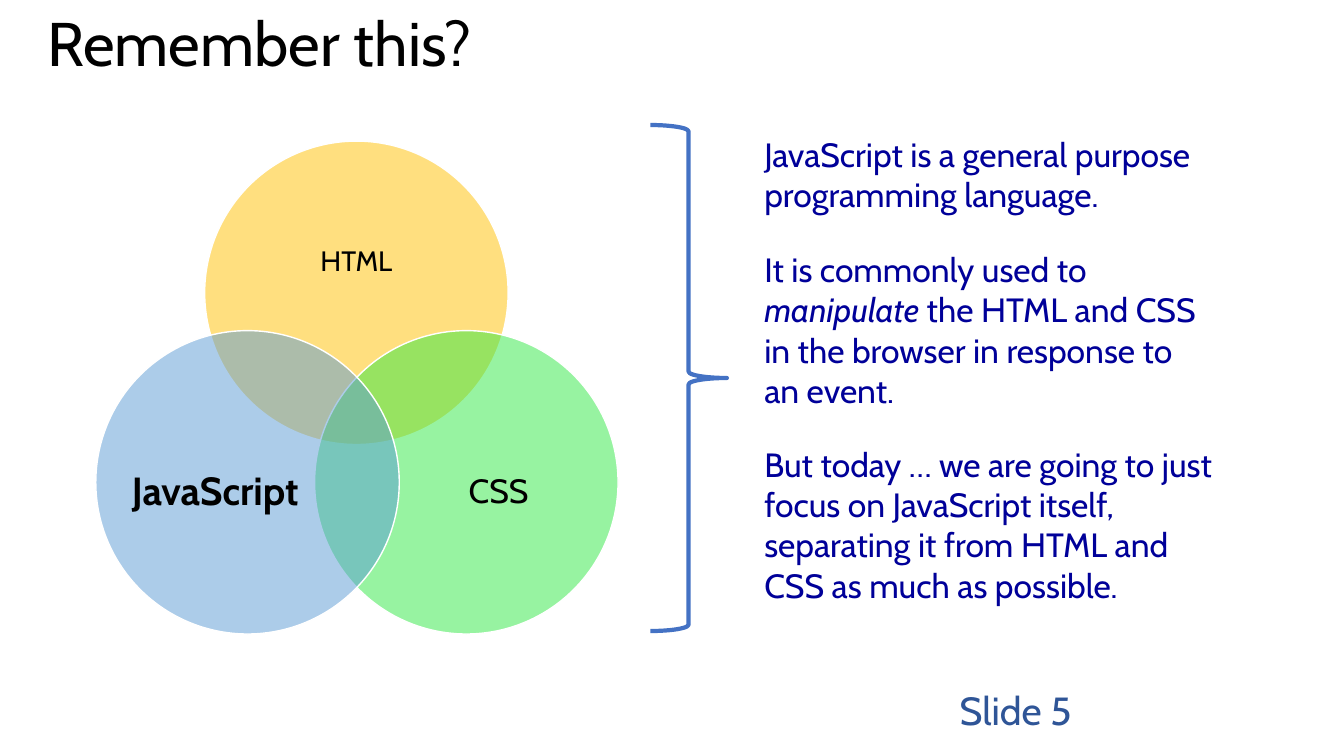
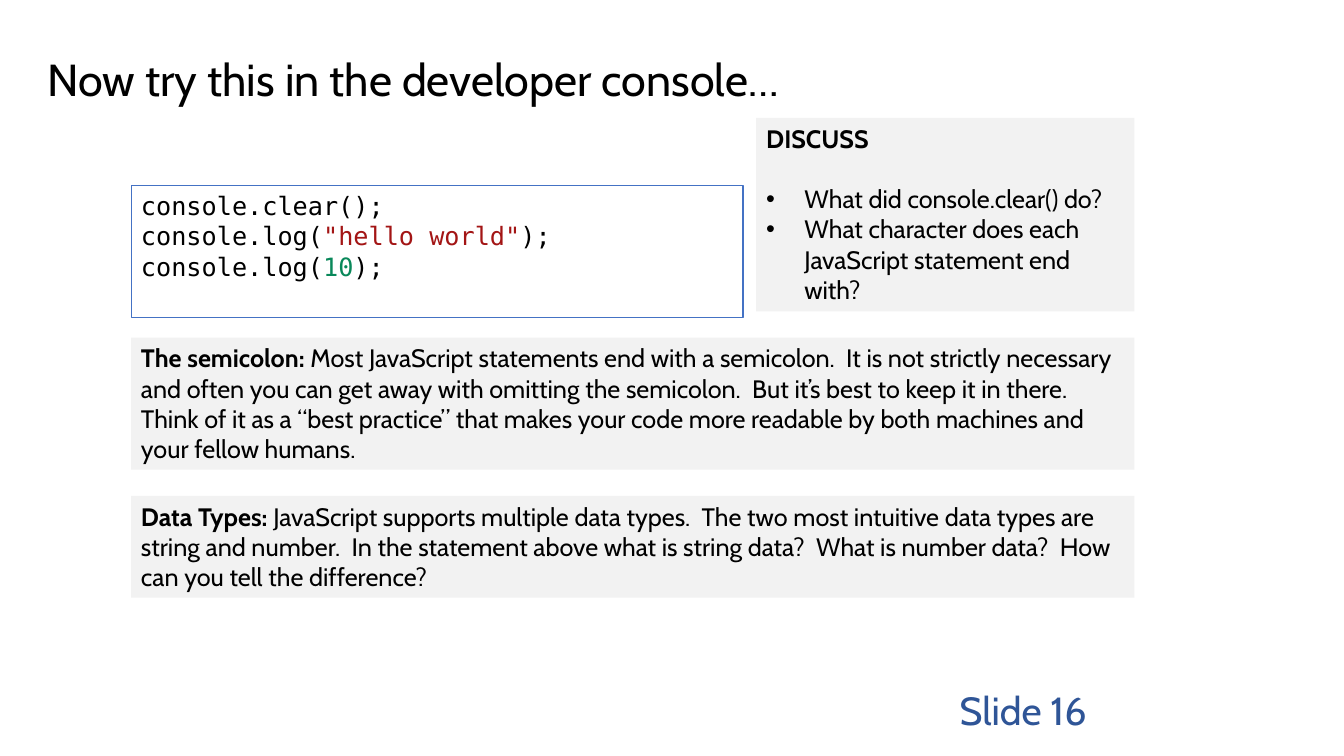
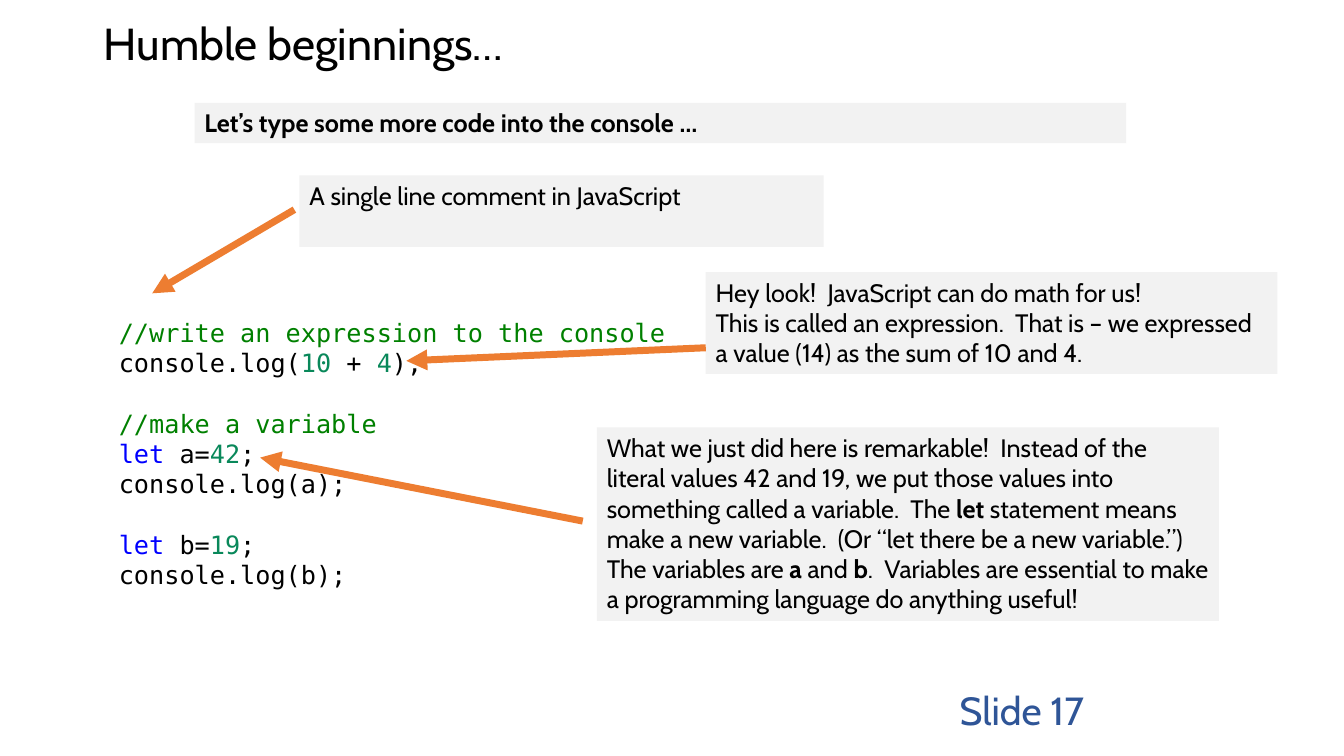
from lxml.etree import SubElement
from pptx import Presentation
from pptx.dml.color import RGBColor
from pptx.enum.shapes import MSO_CONNECTOR as CONNECTOR, MSO_SHAPE as SHAPE
from pptx.enum.text import MSO_ANCHOR as ANCHOR, PP_ALIGN as ALIGN
from pptx.oxml.ns import qn
from pptx.util import Pt

PX = 9144  # 100 px to the inch
rgb = RGBColor.from_string

SANS, MONO = "Cabin", "DejaVu Sans Mono"
BLACK, WHITE, NAVY, FOOTER_BLUE = "000000", "FFFFFF", "000099", "2F5597"
BLUE, ORANGE, PANEL_GREY = "4472C4", "ED7D31", "F2F2F2"
NUMBER, STRING = {"color": "09885A"}, {"color": "A31515"}
COMMENT, KEYWORD = {"color": "008000"}, {"color": "0000FF"}
BOLD, ITALIC = {"bold": True}, {"italic": True}
BLANK_LINE = Pt(21.6)


def add_text(slide, box, paragraphs, size=18, font=SANS, color=BLACK, fill=None,
             outline=None, anchor=ANCHOR.TOP, insets=(10, 5), align=ALIGN.LEFT):
    """Add a text box, or a rectangle if filled or outlined; a run is text or (text, style)."""
    place = [n * PX for n in box]
    if fill or outline:
        holder = slide.shapes.add_shape(SHAPE.RECTANGLE, *place)
        holder.shadow.inherit = False
        if fill:
            holder.fill.solid()
            holder.fill.fore_color.rgb = rgb(fill)
        else:
            holder.fill.background()
        if outline:
            holder.line.color.rgb = rgb(outline)
            holder.line.width = Pt(0.75)
        else:
            holder.line.fill.background()
    else:
        holder = slide.shapes.add_textbox(*place)
    frame = holder.text_frame
    frame.word_wrap = True
    frame.vertical_anchor = anchor
    frame.margin_left = frame.margin_right = insets[0] * PX
    frame.margin_top = frame.margin_bottom = insets[1] * PX
    for index, runs in enumerate(paragraphs):
        paragraph = frame.paragraphs[0] if index == 0 else frame.add_paragraph()
        paragraph.alignment = align
        for item in runs:
            text, style = (item, {}) if isinstance(item, str) else item
            run = paragraph.add_run()
            run.text = text
            run.font.name = font
            run.font.size = Pt(size)
            run.font.bold = style.get("bold", False)
            run.font.italic = style.get("italic", False)
            run.font.color.rgb = rgb(style.get("color", color))
    return frame


deck = Presentation()
deck.slide_width, deck.slide_height = 1333 * PX, 750 * PX

# Title and footer of every slide
slides = []
for title, left, top, size, number in [
    ("Remember this?", 0, 0, 44, 5),
    ("Now try this in the developer console…", 0, 35, 32, 16),
    ("Humble beginnings…", 56, 0, 32, 17),
]:
    slide = deck.slides.add_slide(deck.slide_layouts[6])
    heading = add_text(slide, (left, top, 1333 - left, 92), [[title]], size, anchor=ANCHOR.MIDDLE)
    heading.margin_left = 47 * PX
    heading.paragraphs[0].line_spacing = 0.9
    add_text(slide, (942, 676, 300, 40), [[f"Slide {number}"]], 28, color=FOOTER_BLUE)
    slides.append(slide)
remember, console, beginnings = slides

# Remember this?: the three web languages
DIAMETER = 301
for language, left, top, color, label_box, size, style in [
    ("HTML", 203, 140, "FFC000", (243, 192, 221, 136), 20, {}),
    ("CSS", 312, 328, "30E845", (404, 406, 181, 166), 24, {}),
    ("JavaScript", 95, 328, "5B9BD5", (123, 406, 181, 166), 28, BOLD),
]:
    circle = remember.shapes.add_shape(
        SHAPE.OVAL, left * PX, top * PX, DIAMETER * PX, DIAMETER * PX)
    circle.shadow.inherit = False
    circle.fill.solid()
    circle.fill.fore_color.rgb = rgb(color)
    tint = circle._element.spPr.find(qn("a:solidFill")).find(qn("a:srgbClr"))
    SubElement(tint, qn("a:alpha"), val="50000")
    circle.line.color.rgb = rgb(WHITE)
    circle.line.width = Pt(1)
    label = add_text(remember, label_box, [[(language, style)]], size,
                     anchor=ANCHOR.MIDDLE, insets=(0, 0), align=ALIGN.CENTER)
    label.paragraphs[0].line_spacing = 0.9

brace = remember.shapes.add_shape(SHAPE.RIGHT_BRACE, 645 * PX, 124 * PX, 76 * PX, 502 * PX)
brace.shadow.inherit = False
brace.fill.solid()
brace.fill.fore_color.rgb = rgb(WHITE)
brace.line.color.rgb = rgb(BLUE)
brace.line.width = Pt(3)

for top, height, remark in [
    (132, 81, ["JavaScript is a general purpose programming language."]),
    (246, 162, ["It is commonly used to ", ("manipulate", ITALIC),
                " the HTML and CSS in the browser in response to an event."]),
    (439, 162, ["But today … we are going to just focus on JavaScript itself, "
                "separating it from HTML and CSS as much as possible."]),
]:
    add_text(remember, (758, top, 445, height), [remark], 24, color=NAVY,
             anchor=ANCHOR.MIDDLE, insets=(0, 0))

# Now try this: first statements and what to discuss
add_text(console, (130, 184, 607, 131), [
    ["console.clear();"],
    ["console.log(", ('"hello world"', STRING), ");"],
    ["console.log(", ("10", NUMBER), ");"],
], font=MONO, outline=BLUE)

discuss = add_text(console, (750, 117, 375, 192), [
    [("DISCUSS", BOLD)],
    ["What did console.clear() do?"],
    ["What character does each JavaScript statement end with?"],
], fill=PANEL_GREY)
questions = discuss.paragraphs[1:]
for question in questions:
    properties = question._p.get_or_add_pPr()
    properties.set("marL", str(38 * PX))
    properties.set("indent", str(-38 * PX))
    SubElement(properties, qn("a:buFont"), typeface="Arial")
    SubElement(properties, qn("a:buChar"), char="•")
questions[0].space_before = BLANK_LINE

for top, height, term, explanation in [
    (335, 131, "The semicolon: ",
     "Most JavaScript statements end with a semicolon.  It is not strictly necessary and often "
     "you can get away with omitting the semicolon.  But it’s best to keep it in there.  Think "
     "of it as a “best practice” that makes your code more readable by both machines and your "
     "fellow humans."),
    (492, 101, "Data Types: ",
     "JavaScript supports multiple data types.  The two most intuitive data types are string "
     "and number.  In the statement above what is string data?  What is number data?  How can "
     "you tell the difference?"),
]:
    add_text(console, (130, top, 995, height), [[(term, BOLD), explanation]], fill=PANEL_GREY)

# Humble beginnings: code with callouts
code = add_text(beginnings, (108, 310, 758, 283), [
    [("//write an expression to the console", COMMENT)],
    ["console.log(", ("10", NUMBER), " + ", ("4", NUMBER), ");"],
    [("//make a variable", COMMENT)],
    [("let", KEYWORD), " a=", ("42", NUMBER), ";"],
    ["console.log(a);"],
    [("let", KEYWORD), " b=", ("19", NUMBER), ";"],
    ["console.log(b);"],
], font=MONO)
for block_start in (2, 5):
    code.paragraphs[block_start].space_before = BLANK_LINE

for box, callout in [
    ((193, 102, 924, 40), [[("Let’s type some more code into the console …", BOLD)]]),
    ((297, 174, 520, 71), [["A single line comment in JavaScript"]]),
    ((700, 270, 567, 101), [
        ["Hey look!  JavaScript can do math for us!"],
        ["This is called an expression.  That is – we expressed a value (14) as the sum of "
         "10 and 4."]]),
    ((592, 424, 617, 192), [
        ["What we just did here is remarkable!  Instead of the literal values 42 and 19, we put "
         "those values into something called a variable.  The ", ("let", BOLD),
         " statement means make a new variable.  (Or “let there be a new variable.”)"],
        ["The variables are ", ("a", BOLD), " and ", ("b", BOLD),
         ".  Variables are essential to make a programming language do anything useful!"]]),
]:
    add_text(beginnings, box, callout, fill=PANEL_GREY)

for ends in [(292, 208, 151, 291), (700, 345, 403, 358), (578, 517, 258, 454)]:
    arrow = beginnings.shapes.add_connector(CONNECTOR.STRAIGHT, *[n * PX for n in ends])
    arrow.line.color.rgb = rgb(ORANGE)
    arrow.line.width = Pt(5)
    outline = arrow._element.spPr
    SubElement(outline.find(qn("a:ln")), qn("a:tailEnd"), type="triangle")
    SubElement(outline, qn("a:effectLst"))

deck.save("out.pptx")
